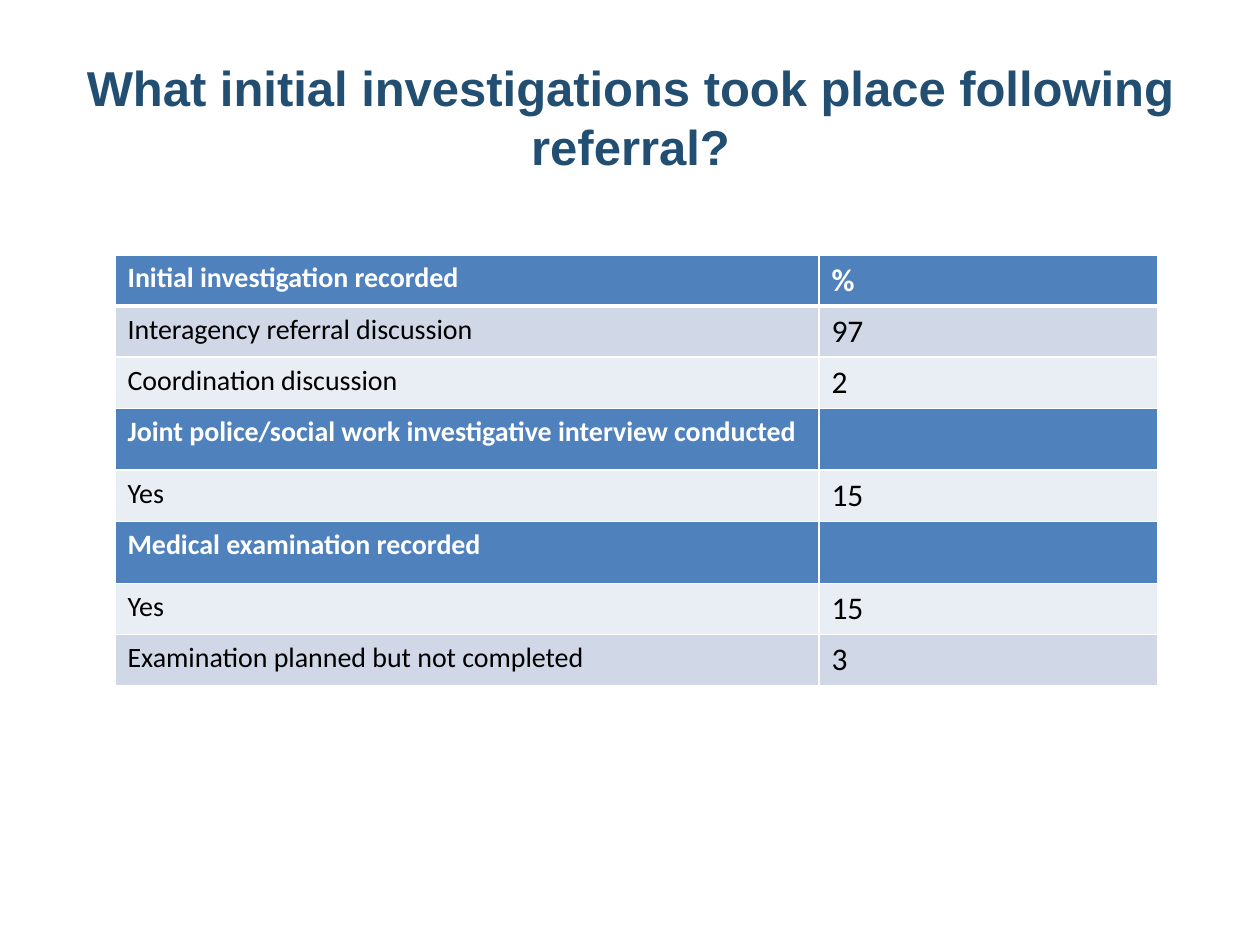
from dataclasses import dataclass

from lxml.etree import SubElement
from pptx import Presentation
from pptx.dml.color import RGBColor
from pptx.enum.text import MSO_ANCHOR, PP_ALIGN
from pptx.oxml.ns import qn
from pptx.util import Pt


@dataclass(frozen=True)
class Theme:
    title_font: str = "Arial"
    body_font: str = "Calibri"
    title_color: str = "224E71"
    head_fill: str = "4F81BD"
    dark_band: str = "D0D8E8"
    light_band: str = "E9EDF4"
    white: str = "FFFFFF"
    black: str = "000000"
    title_size: int = 28
    label_size: int = 16
    value_size: int = 18


THEME = Theme()
EMU_PER_PX = 914400 / 126

# Label, value; a section heading has no number
ROWS = [
    ("Initial investigation recorded", "%"),
    ("Interagency referral discussion", "97"),
    ("Coordination discussion", "2"),
    ("Joint police/social work investigative interview conducted", ""),
    ("Yes", "15"),
    ("Medical examination recorded", ""),
    ("Yes", "15"),
    ("Examination planned but not completed", "3"),
]
COL_WIDTHS = (704, 339)
ROW_HEIGHT, SECTION_HEIGHT = 51, 62


def px(n):
    return round(n * EMU_PER_PX)


def format_text(p, font, size, color, bold):
    for r in p.runs:
        r.font.name = font
        r.font.size = Pt(size)
        r.font.bold = bold
        r.font.color.rgb = RGBColor.from_string(color)


def add_title(s, text, x, y, w, h):
    sp = s.shapes.title
    sp.left, sp.top, sp.width, sp.height = px(x), px(y), px(w), px(h)
    tf = sp.text_frame
    tf.text = text
    tf.word_wrap = True
    tf.vertical_anchor = MSO_ANCHOR.MIDDLE
    p = tf.paragraphs[0]
    p.alignment = PP_ALIGN.CENTER
    format_text(p, THEME.title_font, THEME.title_size, THEME.title_color, True)


def set_borders(cell, top, bottom):
    tc_pr = cell._tc.get_or_add_tcPr()
    for side, width in (("L", 1), ("R", 1), ("T", top), ("B", bottom)):
        ln = SubElement(tc_pr, qn(f"a:ln{side}"), w=str(Pt(width)))
        fill = SubElement(ln, qn("a:solidFill"))
        SubElement(fill, qn("a:srgbClr"), val=THEME.white)


def add_results_table(s, rows, x, y):
    heights = [ROW_HEIGHT if value else SECTION_HEIGHT for _, value in rows]
    table = s.shapes.add_table(len(rows), len(COL_WIDTHS), px(x), px(y),
                               px(sum(COL_WIDTHS)), px(sum(heights))).table
    for col, width in zip(table.columns, COL_WIDTHS):
        col.width = px(width)

    for i, (row, height) in enumerate(zip(rows, heights)):
        table.rows[i].height = px(height)
        is_head = not row[1].isdigit()
        band = THEME.dark_band if i % 2 else THEME.light_band
        color = THEME.white if is_head else THEME.black
        for j, size in enumerate((THEME.label_size, THEME.value_size)):
            cell = table.cell(i, j)
            # Thick rule between the header and the first row
            set_borders(cell, top=3 if i == 1 else 1, bottom=3 if i == 0 else 1)
            cell.fill.solid()
            cell.fill.fore_color.rgb = RGBColor.from_string(
                THEME.head_fill if is_head else band)
            if row[j]:
                cell.text_frame.text = row[j]
                format_text(cell.text_frame.paragraphs[0], THEME.body_font,
                            size, color, is_head)


def main():
    prs = Presentation()
    prs.slide_width, prs.slide_height = px(1260), px(945)
    s = prs.slides.add_slide(prs.slide_layouts[5])

    add_title(s, "What initial investigations took place following referral?",
              25, 38, 1211, 157)
    add_results_table(s, ROWS, 115, 255)

    prs.save("out.pptx")


if __name__ == "__main__":
    main()
